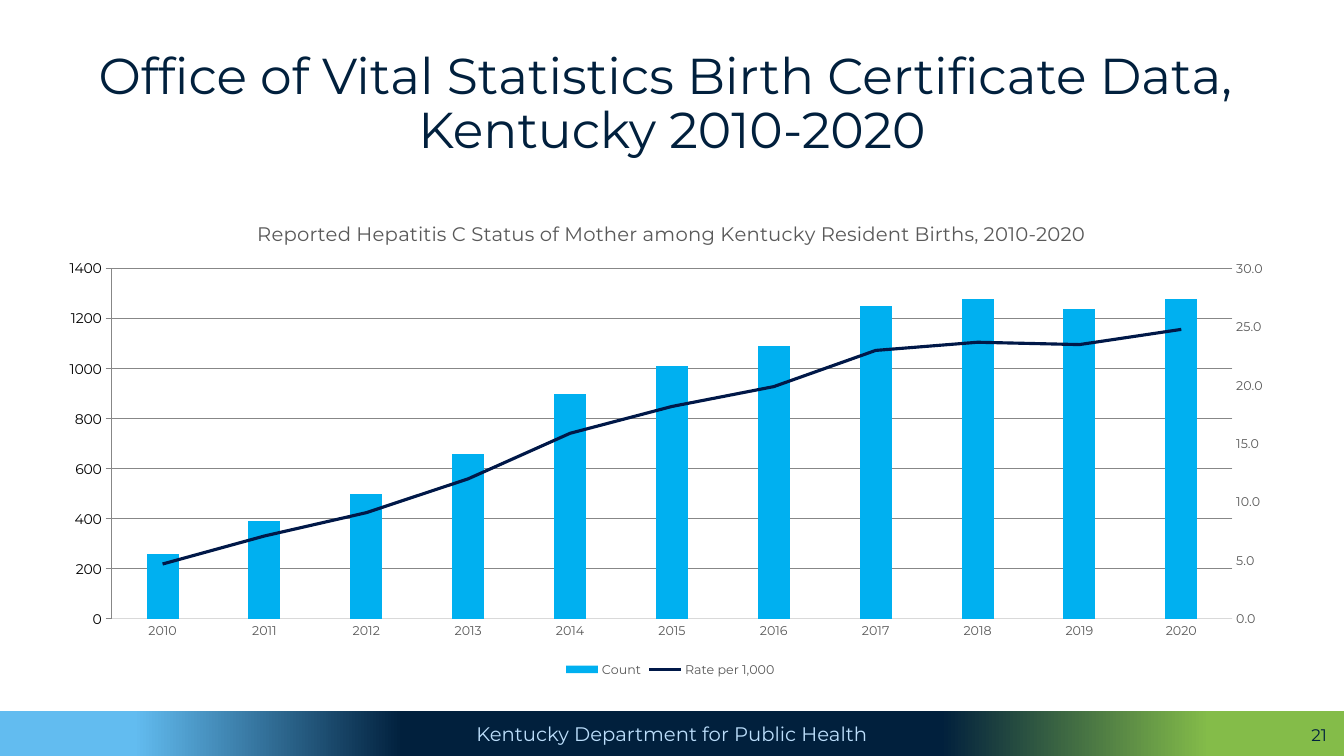
import lxml.etree
import pptx
import pptx.chart.axis
import pptx.chart.data
import pptx.dml.color
import pptx.enum.chart
import pptx.enum.shapes
import pptx.enum.text
import pptx.oxml
import pptx.oxml.ns
import pptx.util
from pptx.util import Inches

RGBColor = pptx.dml.color.RGBColor
NAVY = RGBColor(0x01, 0x20, 0x3D)
SKY = RGBColor(0x62, 0xBC, 0xF0)
GREEN = RGBColor(0x84, 0xBC, 0x49)
PALE_BLUE = RGBColor(0xBC, 0xDE, 0xFB)
GRAY = RGBColor(0x59, 0x59, 0x59)
LIGHT_GRAY = RGBColor(0xD9, 0xD9, 0xD9)
BAR_BLUE = RGBColor(0x00, 0xB0, 0xF0)
LINE_NAVY = RGBColor(0x00, 0x18, 0x48)
FONT = "Montserrat"
ALIGN = pptx.enum.text.PP_ALIGN
MIDDLE = pptx.enum.text.MSO_ANCHOR.MIDDLE
TICK = pptx.enum.chart.XL_TICK_MARK
qn = pptx.oxml.ns.qn

YEARS = [str(year) for year in range(2010, 2021)]
COUNTS = [260, 390, 500, 660, 900, 1010, 1090, 1250, 1280, 1240, 1280]
RATES = [4.7, 7.1, 9.1, 12, 15.9, 18.2, 19.9, 23, 23.7, 23.5, 24.8]
FOOTER_STOPS = [(10, SKY), (30, NAVY), (70, NAVY), (90, GREEN)]


def style_font(font, size, color):
    font.name = FONT
    font.size = pptx.util.Pt(size)
    font.bold = False
    font.color.rgb = color


def set_text(shape, text, size, color, alignment):
    frame = shape.text_frame
    frame.word_wrap = True
    frame.vertical_anchor = MIDDLE
    frame.text = text
    paragraph = frame.paragraphs[0]
    paragraph.alignment = alignment
    style_font(paragraph.font, size, color)
    return paragraph


def add_footer(slide):
    band = slide.shapes.add_shape(
        pptx.enum.shapes.MSO_SHAPE.RECTANGLE,
        Inches(0), Inches(7.05), Inches(13.33), Inches(0.45))
    band.shadow.inherit = False
    band.line.fill.background()
    band.fill.gradient()
    band.fill.gradient_angle = 0
    stops = next(band.element.iter(qn("a:gsLst")))
    for stop in list(stops):
        stops.remove(stop)
    for percent, color in FOOTER_STOPS:
        stop = lxml.etree.SubElement(stops, qn("a:gs"), pos=str(percent * 1000))
        lxml.etree.SubElement(stop, qn("a:srgbClr"), val=str(color))
    set_text(band, "Kentucky Department for Public Health", 14, PALE_BLUE, ALIGN.CENTER)


def add_title(slide, text):
    title = slide.shapes.title
    title.left, title.top = Inches(0.49), Inches(0.4)
    title.width, title.height = Inches(12.35), Inches(1.29)
    set_text(title, text, 36, NAVY, ALIGN.CENTER).line_spacing = 0.9


def add_page_number(slide, number):
    box = slide.shapes.add_textbox(Inches(12.5), Inches(7.15), Inches(0.76), Inches(0.28))
    set_text(box, number, 12, NAVY, ALIGN.RIGHT)


def move_rate_to_right_axis(chart):
    """Turn the second series into a line on its own right-hand axis."""
    plot_area = next(chart.element.iter(qn("c:plotArea")))
    bars = plot_area.find(qn("c:barChart"))
    rate = bars.findall(qn("c:ser"))[1]
    for bar_only in rate.findall(qn("c:invertIfNegative")):
        rate.remove(bar_only)
    namespace = pptx.oxml.ns.nsdecls("c")
    line = pptx.oxml.parse_xml(
        f'<c:lineChart {namespace}><c:grouping val="standard"/><c:varyColors val="0"/>'
        '<c:marker val="1"/><c:axId val="5001"/><c:axId val="5002"/></c:lineChart>')
    line.insert(2, rate)
    bars.addnext(line)
    hidden_years = pptx.oxml.parse_xml(
        f'<c:catAx {namespace}><c:axId val="5001"/><c:scaling><c:orientation val="minMax"/>'
        '</c:scaling><c:delete val="1"/><c:axPos val="b"/><c:crossAx val="5002"/></c:catAx>')
    right_axis = pptx.oxml.parse_xml(
        f'<c:valAx {namespace}><c:axId val="5002"/><c:scaling><c:orientation val="minMax"/>'
        '</c:scaling><c:delete val="0"/><c:axPos val="r"/>'
        '<c:numFmt formatCode="0.0" sourceLinked="0"/><c:majorTickMark val="out"/>'
        '<c:minorTickMark val="none"/><c:tickLblPos val="nextTo"/>'
        '<c:crossAx val="5001"/><c:crosses val="max"/></c:valAx>')
    plot_area.find(qn("c:valAx")).addnext(hidden_years)
    hidden_years.addnext(right_axis)
    return pptx.chart.axis.ValueAxis(right_axis)


def place_plot(chart, **fractions):
    plot_area = next(chart.element.iter(qn("c:plotArea")))
    for old in plot_area.findall(qn("c:layout")):
        plot_area.remove(old)
    layout = lxml.etree.Element(qn("c:layout"))
    manual = lxml.etree.SubElement(layout, qn("c:manualLayout"))
    settings = {"layoutTarget": "inner", "xMode": "edge", "yMode": "edge", **fractions}
    for name, value in settings.items():
        lxml.etree.SubElement(manual, qn("c:" + name), val=str(value))
    plot_area.insert(0, layout)


def style_value_axis(axis, maximum, step):
    axis.minimum_scale, axis.maximum_scale, axis.major_unit = 0, maximum, step
    axis.has_major_gridlines = False
    axis.format.line.fill.background()
    style_font(axis.tick_labels.font, 9, GRAY)


def add_births_chart(slide):
    data = pptx.chart.data.CategoryChartData()
    data.categories = YEARS
    data.add_series("Count", COUNTS, "0")
    data.add_series("Rate per 1,000 ", RATES, "0.0")
    chart = slide.shapes.add_chart(
        pptx.enum.chart.XL_CHART_TYPE.COLUMN_CLUSTERED,
        Inches(0.49), Inches(2), Inches(12.35), Inches(4.76), data).chart
    chart.font.name = FONT
    chart.font.size = pptx.util.Pt(10)

    # Title and legend
    chart.has_title = True
    chart.chart_title.include_in_layout = False
    heading = chart.chart_title.text_frame
    heading.text = "Reported Hepatitis C Status of Mother among Kentucky Resident Births, 2010-2020"
    style_font(heading.paragraphs[0].font, 14, GRAY)
    chart.has_legend = True
    chart.legend.position = pptx.enum.chart.XL_LEGEND_POSITION.BOTTOM
    chart.legend.include_in_layout = False
    style_font(chart.legend.font, 9, GRAY)

    # Axes
    right_axis = move_rate_to_right_axis(chart)
    style_value_axis(chart.value_axis, 1400, 200)
    style_value_axis(right_axis, 30, 5)
    chart.value_axis.major_tick_mark = TICK.NONE
    years = chart.category_axis
    years.major_tick_mark = TICK.NONE
    years.format.line.color.rgb = LIGHT_GRAY
    years.format.line.width = pptx.util.Pt(0.75)
    style_font(years.tick_labels.font, 9, GRAY)
    place_plot(chart, x=0.05, y=0.14, w=0.9, h=0.73)

    # Series
    bars, line = chart.plots
    bars.gap_width = 219
    bars.vary_by_categories = False
    count = bars.series[0]
    count.format.fill.solid()
    count.format.fill.fore_color.rgb = BAR_BLUE
    rate = line.series[0]
    rate.smooth = False
    rate.marker.style = pptx.enum.chart.XL_MARKER_STYLE.NONE
    rate.format.line.color.rgb = LINE_NAVY
    rate.format.line.width = pptx.util.Pt(2.25)


def main():
    presentation = pptx.Presentation()
    presentation.slide_width = Inches(13.33)
    presentation.slide_height = Inches(7.5)
    slide = presentation.slides.add_slide(presentation.slide_layouts[5])
    add_footer(slide)
    add_title(slide, "Office of Vital Statistics Birth Certificate Data, \vKentucky 2010-2020")
    add_page_number(slide, "21")
    add_births_chart(slide)
    presentation.save("out.pptx")


if __name__ == "__main__":
    main()
